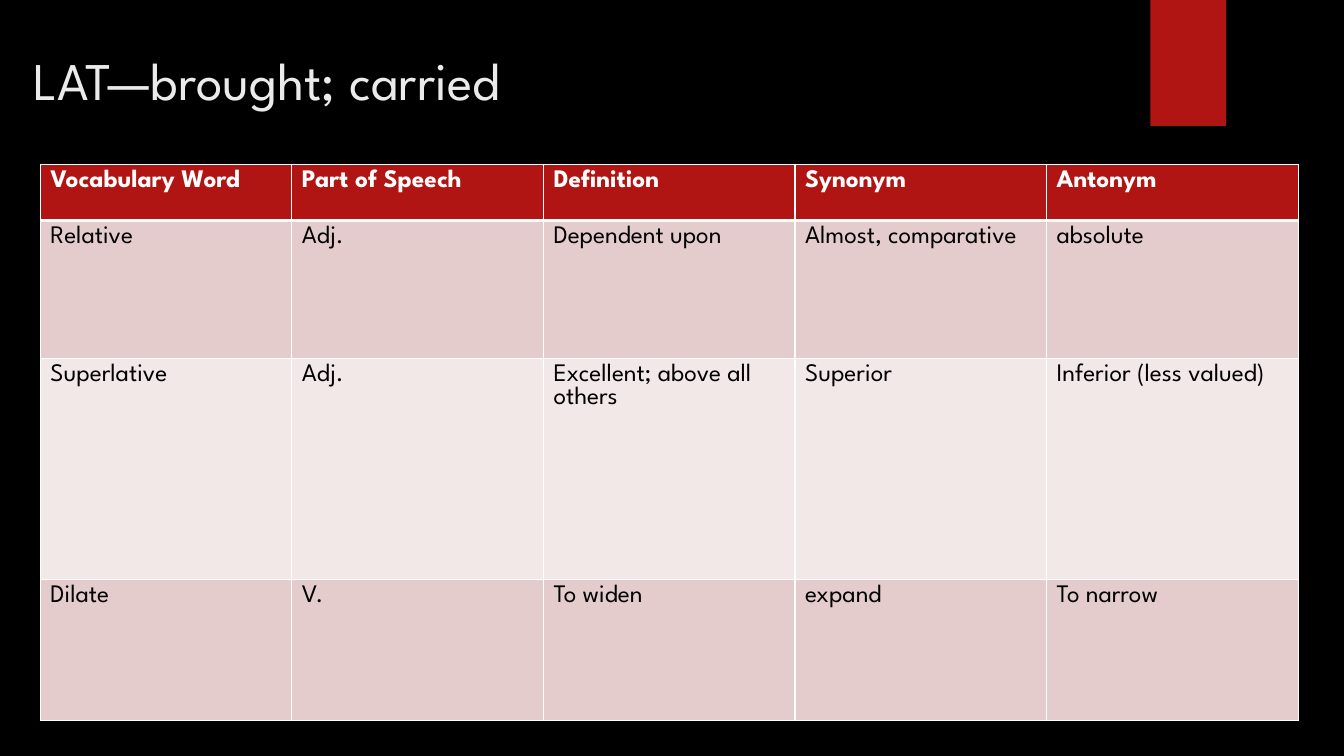
from lxml import etree
from pptx import Presentation
from pptx.dml.color import RGBColor
from pptx.enum.shapes import MSO_SHAPE as Shape
from pptx.enum.text import MSO_ANCHOR as Anchor, PP_ALIGN as Align
from pptx.oxml.ns import qn
from pptx.util import Pt

FONT = "League Spartan"
BLACK = RGBColor(0x00, 0x00, 0x00)
WHITE = RGBColor(0xFF, 0xFF, 0xFF)
TITLE_GRAY = RGBColor(0xEB, 0xEB, 0xEB)
RED = RGBColor(0xB0, 0x15, 0x13)
ROSE = RGBColor(0xE4, 0xCC, 0xCC)
PALE_ROSE = RGBColor(0xF2, 0xE8, 0xE7)

COLUMN_WIDTH = 179.7
ROW_HEIGHTS = [40, 98.7, 157.8, 100.7]
VOCABULARY = [
    ["Vocabulary Word", "Part of Speech", "Definition", "Synonym", "Antonym"],
    ["Relative", "Adj.", "Dependent upon", "Almost, comparative", "absolute"],
    ["Superlative", "Adj.", "Excellent; above all others", "Superior",
     "Inferior (less valued)"],
    ["Dilate", "V.", "To widen", "expand", "To narrow"],
]


def format_text(text_frame, size, color, bold=False):
    for paragraph in text_frame.paragraphs:
        paragraph.alignment = Align.LEFT
        for run in paragraph.runs:
            run.font.name = FONT
            run.font.size = Pt(size)
            run.font.bold = bold
            run.font.color.rgb = color


def add_title(slide, text):
    title = slide.shapes.title
    title.left, title.top, title.width, title.height = (
        Pt(16.6), Pt(18.7), Pt(756), Pt(103))
    text_frame = title.text_frame
    text_frame.text = text
    text_frame.word_wrap = True
    text_frame.vertical_anchor = Anchor.TOP
    text_frame.margin_top = Pt(15.5)
    text_frame.paragraphs[0].line_spacing = 1
    format_text(text_frame, 37.8, TITLE_GRAY)


def add_ribbon(slide):
    ribbon = slide.shapes.add_shape(
        Shape.RECTANGLE, Pt(821.8), Pt(0), Pt(54), Pt(90))
    ribbon.shadow.inherit = False
    ribbon.fill.solid()
    ribbon.fill.fore_color.rgb = RED
    ribbon.line.fill.background()


def set_borders(cell, widths):
    properties = cell._tc.get_or_add_tcPr()
    for side, width in widths.items():
        line = etree.SubElement(properties, qn(f"a:ln{side}"), w=str(Pt(width)))
        fill = etree.SubElement(line, qn("a:solidFill"))
        etree.SubElement(fill, qn("a:srgbClr"), val=str(WHITE))


def format_cell(cell, row_index):
    is_header = row_index == 0
    # Both cells that share the header rule carry its width
    set_borders(cell, {"L": 1, "R": 1, "T": 3 if row_index == 1 else 1,
                       "B": 3 if is_header else 1})
    cell.fill.solid()
    cell.fill.fore_color.rgb = (
        RED if is_header else ROSE if row_index % 2 else PALE_ROSE)
    format_text(cell.text_frame, 18, WHITE if is_header else BLACK, is_header)


def add_vocabulary_table(slide):
    column_count = len(VOCABULARY[0])
    table = slide.shapes.add_table(
        len(VOCABULARY), column_count, Pt(28.8), Pt(117.4),
        Pt(COLUMN_WIDTH * column_count), Pt(sum(ROW_HEIGHTS))).table
    for column in table.columns:
        column.width = Pt(COLUMN_WIDTH)
    for row_index, words in enumerate(VOCABULARY):
        table.rows[row_index].height = Pt(ROW_HEIGHTS[row_index])
        for column_index, word in enumerate(words):
            cell = table.cell(row_index, column_index)
            cell.text_frame.text = word
            format_cell(cell, row_index)


def main():
    presentation = Presentation()
    presentation.slide_width, presentation.slide_height = Pt(960), Pt(540)
    slide = presentation.slides.add_slide(presentation.slide_layouts[5])

    # Black background with the red ribbon
    slide.background.fill.solid()
    slide.background.fill.fore_color.rgb = BLACK
    add_ribbon(slide)

    # Title and vocabulary
    add_title(slide, "LAT—brought; carried")
    add_vocabulary_table(slide)

    presentation.save("out.pptx")


if __name__ == "__main__":
    main()
